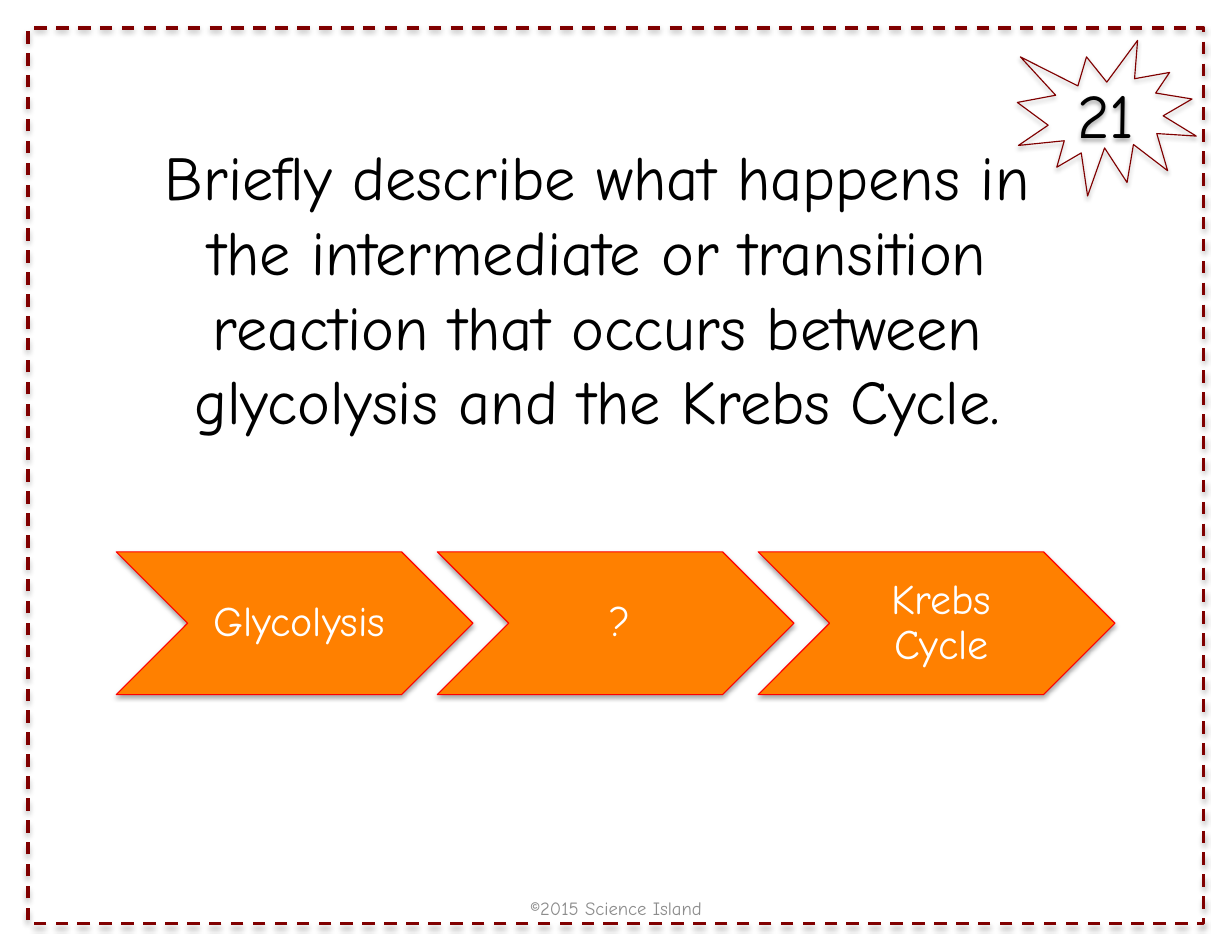
from lxml.etree import SubElement
from pptx import Presentation
from pptx.dml.color import RGBColor
from pptx.enum.dml import MSO_LINE
from pptx.enum.shapes import MSO_SHAPE
from pptx.enum.text import MSO_ANCHOR, PP_ALIGN
from pptx.oxml.ns import qn
from pptx.util import Pt

FONT = "Comic Neue"
MAROON = RGBColor(0x80, 0x00, 0x00)
ORANGE = RGBColor(0xFF, 0x80, 0x00)
RED = RGBColor(0xFF, 0x00, 0x00)
GREY = RGBColor(0x8C, 0x8C, 0x8C)
BLACK = RGBColor(0x00, 0x00, 0x00)
WHITE = RGBColor(0xFF, 0xFF, 0xFF)

PAGE_WIDTH, PAGE_HEIGHT = 792, 612
STAGES = ["Glycolysis", "?", "Krebs Cycle"]


def add_shadow(shape):
    """Give the shape a soft shadow straight below it."""
    shape.shadow.inherit = False
    effects = shape._element.spPr.find(qn("a:effectLst"))
    shadow = SubElement(effects, qn("a:outerShdw"), blurRad=str(Pt(3.1)),
                        dist=str(Pt(1.8)), dir="5400000", rotWithShape="0")
    color = SubElement(shadow, qn("a:srgbClr"), val="000000")
    SubElement(color, qn("a:alpha"), val="35000")


def add_shape(shapes, kind, box, line, width, fill=None):
    shape = shapes.add_shape(kind, *map(Pt, box))
    if fill is None:
        shape.fill.background()
    else:
        shape.fill.solid()
        shape.fill.fore_color.rgb = fill
    shape.line.color.rgb = line
    shape.line.width = Pt(width)
    add_shadow(shape)
    return shape


def write(shape, text, size, color, anchor=MSO_ANCHOR.MIDDLE):
    """Write one centred paragraph into the shape."""
    frame = shape.text_frame
    frame.word_wrap = True
    frame.vertical_anchor = anchor
    para = frame.paragraphs[0]
    para.alignment = PP_ALIGN.CENTER
    span = para.add_run()
    span.text = text
    span.font.name = FONT
    span.font.size = Pt(size)
    span.font.color.rgb = color
    return frame


def add_border(page, box):
    border = add_shape(page.shapes, MSO_SHAPE.RECTANGLE, box, MAROON, 2)
    border.line.dash_style = MSO_LINE.DASH


def add_footer(page, box):
    footer = page.shapes.add_textbox(*map(Pt, box))
    write(footer, "©2015 Science Island", 12, GREY)


def add_number(page, box):
    burst = add_shape(page.shapes, MSO_SHAPE.EXPLOSION1, box, MAROON, 0.75)
    write(burst, "21", 40, BLACK)


def add_question(page, box):
    question = page.shapes.add_textbox(*map(Pt, box))
    write(question,
          "Briefly describe what happens in the intermediate or transition "
          "reaction that occurs between glycolysis and the Krebs Cycle.",
          40, BLACK, MSO_ANCHOR.TOP)


def add_process(page, box):
    """Fill the box with chevrons, each overlapping the next."""
    left, top, width, height = box
    group = page.shapes.add_group_shape()
    overlap = height / 4
    chevron_width = (width + overlap * (len(STAGES) - 1)) / len(STAGES)
    for index, stage in enumerate(STAGES):
        x = left + index * (chevron_width - overlap)
        add_shape(group.shapes, MSO_SHAPE.CHEVRON,
                  (x, top, chevron_width, height), RED, 0.75, ORANGE)
        # The label sits between the notch and the point
        label = group.shapes.add_textbox(
            Pt(x + height / 2), Pt(top), Pt(chevron_width - height), Pt(height))
        frame = write(label, stage, 27, WHITE)
        frame.margin_left = Pt(9)
        frame.margin_right = frame.margin_top = frame.margin_bottom = Pt(3)
        frame.paragraphs[0].line_spacing = 0.9


def main():
    deck = Presentation()
    deck.slide_width = Pt(PAGE_WIDTH)
    deck.slide_height = Pt(PAGE_HEIGHT)
    page = deck.slides.add_slide(deck.slide_layouts[6])

    add_border(page, (18, 18, PAGE_WIDTH - 36, PAGE_HEIGHT - 36))
    add_footer(page, (270.75, 567.5, 250.5, 32.5))
    add_number(page, (654, 26, 115, 100))
    add_question(page, (75.5, 85.5, 617, 250))
    add_process(page, (74.75, 354.75, 642, 91.75))

    deck.save("out.pptx")


if __name__ == "__main__":
    main()
